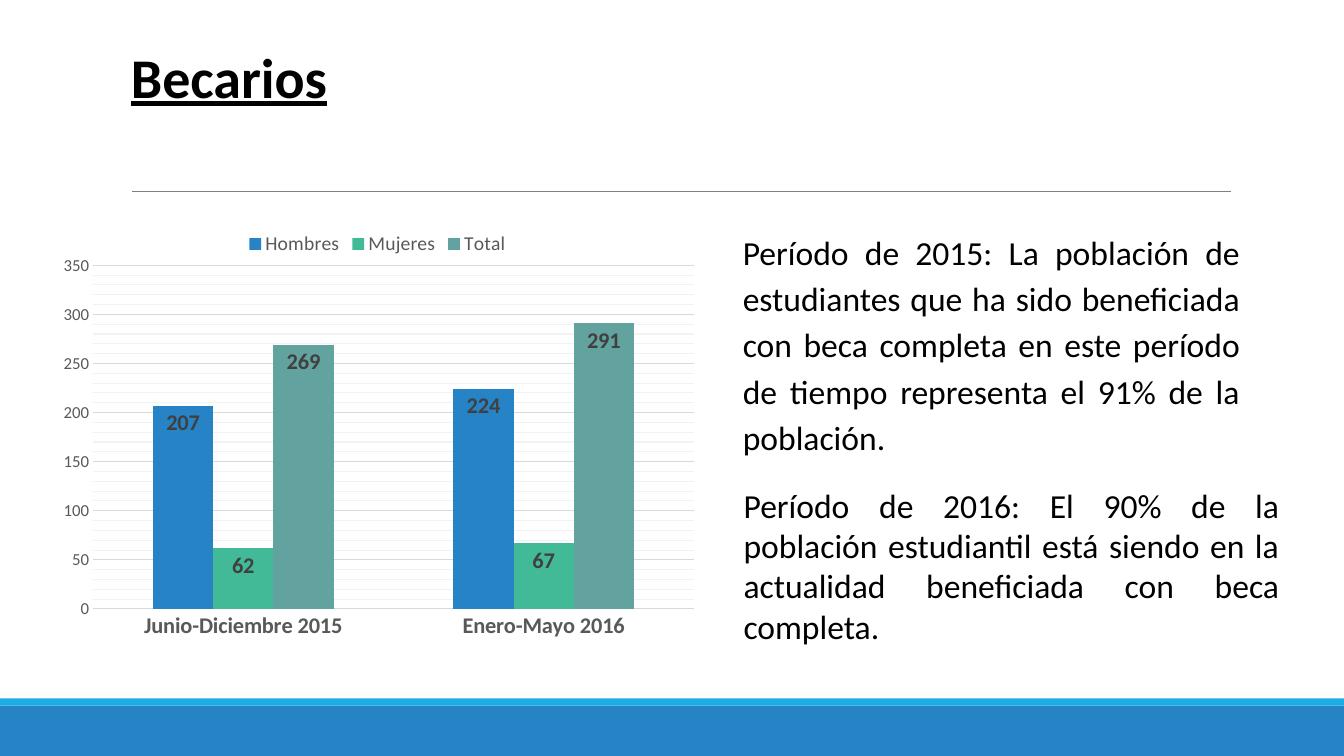
from copy import deepcopy
from dataclasses import dataclass

from lxml import etree
from pptx import Presentation
from pptx.chart.chart import Chart
from pptx.chart.data import CategoryChartData
from pptx.dml.color import RGBColor
from pptx.enum.chart import XL_CHART_TYPE, XL_LABEL_POSITION, XL_LEGEND_POSITION, XL_TICK_MARK
from pptx.enum.shapes import MSO_CONNECTOR, MSO_SHAPE
from pptx.enum.text import MSO_AUTO_SIZE, PP_ALIGN
from pptx.oxml.ns import qn
from pptx.slide import Slide
from pptx.text.text import Font
from pptx.util import Cm, Pt

CLUSTERED = XL_CHART_TYPE.COLUMN_CLUSTERED
INSIDE_END = XL_LABEL_POSITION.INSIDE_END
LEGEND_TOP = XL_LEGEND_POSITION.TOP
NO_TICK = XL_TICK_MARK.NONE
STRAIGHT = MSO_CONNECTOR.STRAIGHT
RECTANGLE = MSO_SHAPE.RECTANGLE
FIT_TEXT = MSO_AUTO_SIZE.SHAPE_TO_FIT_TEXT
LEFT, JUSTIFY = PP_ALIGN.LEFT, PP_ALIGN.JUSTIFY

FONT = "Calibri"
BLACK, GRAY, DARK_GRAY = "000000", "595959", "404040"
GRID, MINOR_GRID = "D9D9D9", "F2F2F2"
SLIDE_WIDTH, SLIDE_HEIGHT = 33.87, 19.05


@dataclass
class Band:
    top: float
    height: float
    color: str


@dataclass
class Passage:
    text: str
    left: float
    top: float
    width: float
    height: float
    size: int = 24
    heading: bool = False
    indent: float = 0
    line_spacing: float = 1.0
    space_after: int = 0


@dataclass
class Group:
    name: str
    counts: tuple[int, ...]
    color: str


BANDS = [Band(17.78, 1.27, "2683C6"), Band(17.6, 0.18, "1CADE4")]
PASSAGES = [
    Passage("Becarios", 3.05, 0.94, 5.51, 1.96, size=40, heading=True),
    Passage(
        "Período de 2015: La población de estudiantes que ha sido beneficiada con beca "
        "completa en este período de tiempo representa el 91% de la población.",
        16.59, 5.56, 14.91, 6.15, indent=1.88, line_spacing=1.15, space_after=10,
    ),
    Passage(
        "Período de 2016: El 90% de la población estudiantil está siendo en la "
        "actualidad beneficiada con beca completa.",
        18.49, 12.09, 14, 4.37,
    ),
]
PERIODS = ["Junio-Diciembre 2015", "Enero-Mayo 2016"]
GROUPS = [
    Group("Hombres", (207, 224), "2683C6"),
    Group("Mujeres", (62, 67), "42BA97"),
    Group("Total", (269, 291), "62A39F"),
]
PLOT_AREA = {"x": 0.06, "y": 0.1, "w": 0.93, "h": 0.77}


def rgb(color: str) -> RGBColor:
    return RGBColor.from_string(color)


def style_font(font: Font, size: int, color: str, bold: bool = False) -> None:
    font.name = FONT
    font.size = Pt(size)
    font.bold = bold
    font.color.rgb = rgb(color)


def add_band(slide: Slide, band: Band) -> None:
    bar = slide.shapes.add_shape(
        RECTANGLE, Cm(0), Cm(band.top), Cm(SLIDE_WIDTH), Cm(band.height)
    )
    bar.shadow.inherit = False
    bar.fill.solid()
    bar.fill.fore_color.rgb = rgb(band.color)
    bar.line.fill.background()


def add_divider(slide: Slide) -> None:
    divider = slide.shapes.add_connector(STRAIGHT, Cm(3.33), Cm(4.83), Cm(31.01), Cm(4.83))
    divider.line.color.rgb = rgb("808080")
    divider.line.width = Pt(0.5)
    etree.SubElement(divider.element.spPr, qn("a:effectLst"))


def add_passage(slide: Slide, passage: Passage) -> None:
    box = slide.shapes.add_textbox(
        Cm(passage.left), Cm(passage.top), Cm(passage.width), Cm(passage.height)
    )
    frame = box.text_frame
    frame.text = passage.text
    frame.word_wrap = not passage.heading
    frame.auto_size = FIT_TEXT
    paragraph = frame.paragraphs[0]
    paragraph.alignment = LEFT if passage.heading else JUSTIFY
    paragraph.line_spacing = passage.line_spacing
    paragraph.space_after = Pt(passage.space_after)
    box.element.find(f".//{qn('a:pPr')}").set("marL", str(Cm(passage.indent)))
    font = paragraph.runs[0].font
    style_font(font, passage.size, BLACK, passage.heading)
    font.underline = passage.heading


def place_plot_area(chart: Chart) -> None:
    """Fix the inner plot area as fractions of the chart frame."""
    plot_area = chart.element.find(f".//{qn('c:plotArea')}")
    for automatic in plot_area.findall(qn("c:layout")):
        plot_area.remove(automatic)
    layout = etree.Element(qn("c:layout"))
    manual = etree.SubElement(layout, qn("c:manualLayout"))
    settings = {"layoutTarget": "inner", "xMode": "edge", "yMode": "edge", **PLOT_AREA}
    for tag, value in settings.items():
        etree.SubElement(manual, qn(f"c:{tag}")).set("val", str(value))
    plot_area.insert(0, layout)


def style_minor_gridlines(chart: Chart) -> None:
    """Give the minor gridlines the major line style in a lighter colour."""
    value_axis = chart.element.find(f".//{qn('c:valAx')}")
    major_style = value_axis.find(f"{qn('c:majorGridlines')}/{qn('c:spPr')}")
    minor_style = deepcopy(major_style)
    minor_style.find(f".//{qn('a:srgbClr')}").set("val", MINOR_GRID)
    value_axis.find(qn("c:minorGridlines")).append(minor_style)


def style_axes(chart: Chart) -> None:
    periods, counts = chart.category_axis, chart.value_axis
    for axis in (periods, counts):
        axis.major_tick_mark = axis.minor_tick_mark = NO_TICK
    style_font(periods.tick_labels.font, 16, GRAY, bold=True)
    style_font(counts.tick_labels.font, 12, GRAY)
    counts.minimum_scale, counts.maximum_scale = 0, 350
    counts.major_unit, counts.minor_unit = 50, 10
    counts.has_minor_gridlines = True
    counts.format.line.fill.background()
    for line in (periods.format.line, counts.major_gridlines.format.line):
        line.color.rgb = rgb(GRID)
        line.width = Pt(0.75)
    style_minor_gridlines(chart)


def add_scholarship_chart(slide: Slide) -> None:
    data = CategoryChartData()
    data.categories = PERIODS
    for group in GROUPS:
        data.add_series(group.name, group.counts)
    chart = slide.shapes.add_chart(
        CLUSTERED, Cm(1.37), Cm(5.56), Cm(16.28), Cm(11.25), data
    ).chart
    style_font(chart.font, 10, BLACK)
    chart.has_title = False
    chart.has_legend = True
    chart.legend.position = LEGEND_TOP
    chart.legend.include_in_layout = False
    style_font(chart.legend.font, 14, GRAY)
    plot = chart.plots[0]
    plot.vary_by_categories = False
    plot.gap_width, plot.overlap = 199, 0
    for group, series in zip(GROUPS, plot.series):
        series.format.fill.solid()
        series.format.fill.fore_color.rgb = rgb(group.color)
        labels = series.data_labels
        labels.show_value = True
        labels.position = INSIDE_END
        style_font(labels.font, 16, DARK_GRAY, bold=True)
    style_axes(chart)
    place_plot_area(chart)


def main() -> None:
    presentation = Presentation()
    presentation.slide_width = Cm(SLIDE_WIDTH)
    presentation.slide_height = Cm(SLIDE_HEIGHT)
    slide = presentation.slides.add_slide(presentation.slide_layouts[6])
    for band in BANDS:
        add_band(slide, band)
    add_divider(slide)
    for passage in PASSAGES:
        add_passage(slide, passage)
    add_scholarship_chart(slide)
    presentation.save("out.pptx")


if __name__ == "__main__":
    main()
